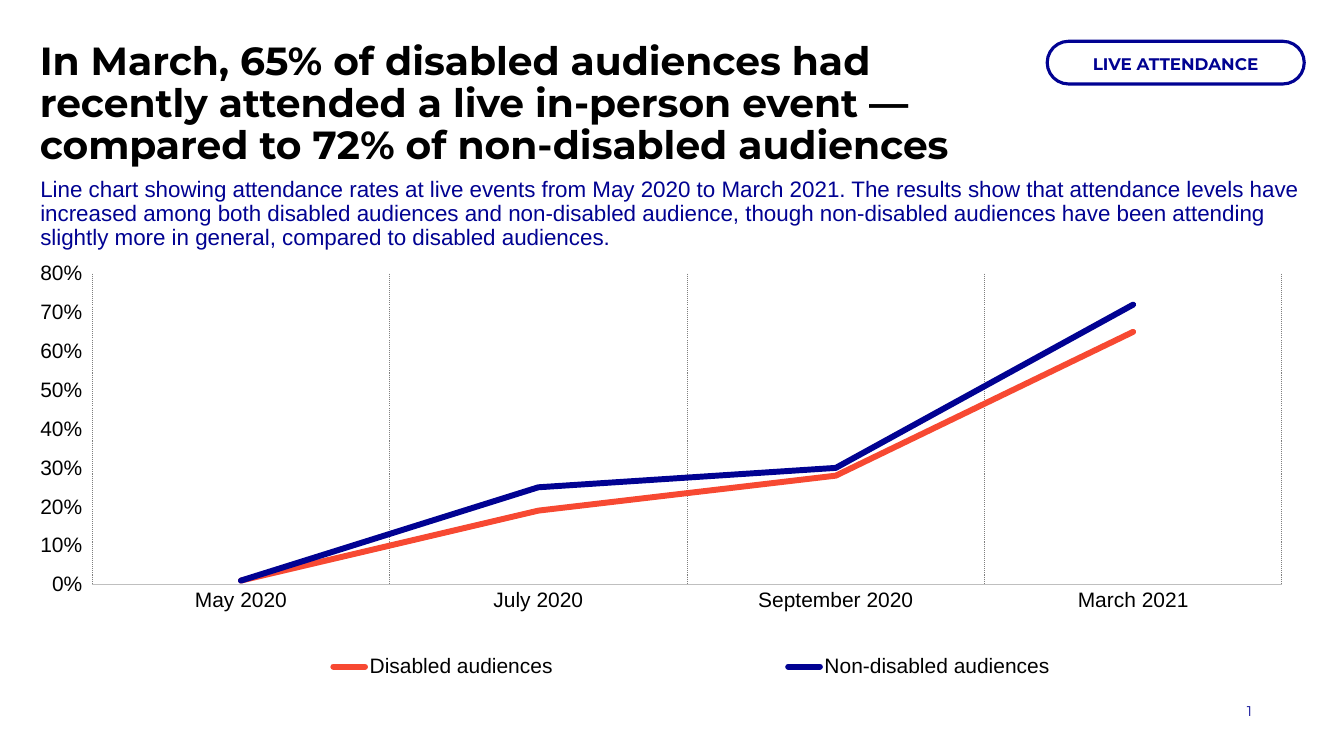
from lxml.etree import SubElement
from pptx import Presentation
from pptx.chart.data import CategoryChartData
from pptx.dml.color import RGBColor
from pptx.enum.chart import XL_CHART_TYPE, XL_LEGEND_POSITION, XL_TICK_MARK
from pptx.enum.dml import MSO_LINE
from pptx.enum.shapes import MSO_SHAPE
from pptx.enum.text import MSO_ANCHOR, MSO_AUTO_SIZE, PP_ALIGN
from pptx.oxml import parse_xml
from pptx.oxml.ns import nsdecls, qn
from pptx.util import Pt

COLORS = {"navy": "010292", "red": "F74932", "black": "000000",
          "axis": "BFBFBF", "grid": "7F7F7F"}
MONTHS = ["May 2020", "July 2020", "September 2020", "March 2021"]
RATES = [("Disabled audiences", "red", (0.01, 0.19, 0.28, 0.65)),
         ("Non-disabled audiences", "navy", (0.01, 0.25, 0.3, 0.72))]


def tint(name):
    """Return the named colour."""
    return RGBColor.from_string(COLORS[name])


def style(font, size, color, face="Arial", bold=False):
    """Set the look of a font."""
    font.size, font.name, font.bold = Pt(size), face, bold
    font.color.rgb = tint(color)


def place(shape, box):
    """Move a shape to a box given in points."""
    shape.left, shape.top, shape.width, shape.height = map(Pt, box)


def setup(frame, anchor=MSO_ANCHOR.TOP, top=0):
    """Prepare a text frame and return its first paragraph."""
    frame.word_wrap, frame.auto_size = True, MSO_AUTO_SIZE.NONE
    frame.vertical_anchor = anchor
    frame.margin_left = frame.margin_right = frame.margin_bottom = 0
    frame.margin_top = Pt(top)
    return frame.paragraphs[0]


def add_title(slide, box, text):
    """Fill and format the title placeholder."""
    title = slide.shapes.title
    place(title, box)
    para = setup(title.text_frame)
    para.text, para.alignment, para.line_spacing = text, PP_ALIGN.LEFT, 0.9
    style(para.font, 28, "black", "Montserrat", True)


def add_pill(slide, box, text):
    """Draw the rounded topic label."""
    pill = slide.shapes.add_shape(MSO_SHAPE.ROUNDED_RECTANGLE, *map(Pt, box))
    pill.adjustments[0] = 0.5
    pill.shadow.inherit = False
    pill.fill.background()
    pill.line.color.rgb, pill.line.width = tint("navy"), Pt(2.25)
    para = setup(pill.text_frame, MSO_ANCHOR.MIDDLE, 3)
    para.text, para.alignment, para.line_spacing = text, PP_ALIGN.CENTER, 0.9
    style(para.font, 12, "navy", "Montserrat", True)


def add_intro(slide, box, text):
    """Write the summary under the title."""
    para = setup(slide.shapes.add_textbox(*map(Pt, box)).text_frame)
    para.text, para.line_spacing = text, 0.9
    style(para.font, 16, "navy")


def add_number(slide, box, text):
    """Write the slide number as a field."""
    frame = slide.shapes.add_textbox(*map(Pt, box)).text_frame
    para = setup(frame, MSO_ANCHOR.BOTTOM)
    para.alignment = PP_ALIGN.RIGHT
    run = para.add_run()
    run.text = text
    style(run.font, 10, "navy", "Montserrat")
    field = parse_xml(
        f'<a:fld {nsdecls("a")} type="slidenum" '
        'id="{B6F15528-21DE-4FAA-801E-634DDDAF4B2B}"/>')
    field.extend(list(run._r))
    para._p.replace(run._r, field)


def arrange(part, after, inner=False, **spots):
    """Give a chart part a manual layout behind the named element."""
    for old in part.findall(qn("c:layout")):
        part.remove(old)
    layout = parse_xml(f'<c:layout {nsdecls("c")}/>')
    manual = SubElement(layout, qn("c:manualLayout"))
    if inner:
        SubElement(manual, qn("c:layoutTarget")).set("val", "inner")
    for mode in ("xMode", "yMode"):
        SubElement(manual, qn(f"c:{mode}")).set("val", "edge")
    for key, spot in spots.items():
        SubElement(manual, qn(f"c:{key}")).set("val", str(spot))
    if after:
        part.find(qn(after)).addnext(layout)
    else:
        part.insert(0, layout)


def add_lines(slide, box):
    """Draw the line chart of attendance rates."""
    data = CategoryChartData(number_format="0%")
    data.categories = MONTHS
    for name, _, rates in RATES:
        data.add_series(name, rates)
    chart = slide.shapes.add_chart(
        XL_CHART_TYPE.LINE, *map(Pt, box), data).chart
    chart.has_title = False
    style(chart.font, 15, "black")
    plot = chart.plots[0]
    plot.vary_by_categories = False
    for series, (_, color, _) in zip(plot.series, RATES):
        series.smooth = False
        line = series.format.line
        line.color.rgb, line.width = tint(color), Pt(4.25)
        line._ln.set("cap", "rnd")
        SubElement(line._ln, qn("a:round"))

    months, rates = chart.category_axis, chart.value_axis
    months.major_tick_mark = XL_TICK_MARK.NONE
    months.format.line.color.rgb = tint("axis")
    months.format.line.width = Pt(0.75)
    months.has_major_gridlines = True
    grid = months.major_gridlines.format.line
    grid.color.rgb, grid.width = tint("grid"), Pt(0.75)
    grid.dash_style = MSO_LINE.ROUND_DOT
    rates.has_major_gridlines = False
    rates.minimum_scale, rates.maximum_scale, rates.major_unit = 0, 0.8, 0.1
    rates.format.line.fill.background()
    rates.tick_labels.number_format = "0%"
    rates.tick_labels.number_format_is_linked = False
    for axis in (months, rates):
        style(axis.tick_labels.font, 15, "black")

    chart.has_legend = True
    legend = chart.legend
    legend.position = XL_LEGEND_POSITION.BOTTOM
    legend.include_in_layout = False
    style(legend.font, 15, "black")
    arrange(legend._element, "c:legendPos", x=0.05, y=0.92, w=0.93, h=0.08)
    area = chart._chartSpace.chart.plotArea
    arrange(area, None, True, x=0.04, y=0.022, w=0.943, h=0.742)


def main():
    """Build and save the slide."""
    deck = Presentation()
    deck.slide_width, deck.slide_height = Pt(960), Pt(540)
    slide = deck.slides.add_slide(deck.slide_layouts[5])
    add_pill(slide, (748, 29.5, 183.6, 30.5), "LIVE ATTENDANCE")
    add_title(slide, (28.4, 29.5, 705.6, 90),
              "In March, 65% of disabled audiences had recently attended a "
              "live in-person event — compared to 72% of non-disabled audiences")
    add_number(slide, (867.6, 499.7, 26.6, 14.4), "2")
    add_lines(slide, (28.8, 187.2, 902.2, 301))
    add_intro(slide, (28.8, 127.4, 902.9, 36),
              "Line chart showing attendance rates at live events from May 2020 "
              "to March 2021. The results show that attendance levels have "
              "increased among both disabled audiences and non-disabled audience, "
              "though non-disabled audiences have been attending slightly more in "
              "general, compared to disabled audiences.")
    deck.save("out.pptx")


if __name__ == "__main__":
    main()
